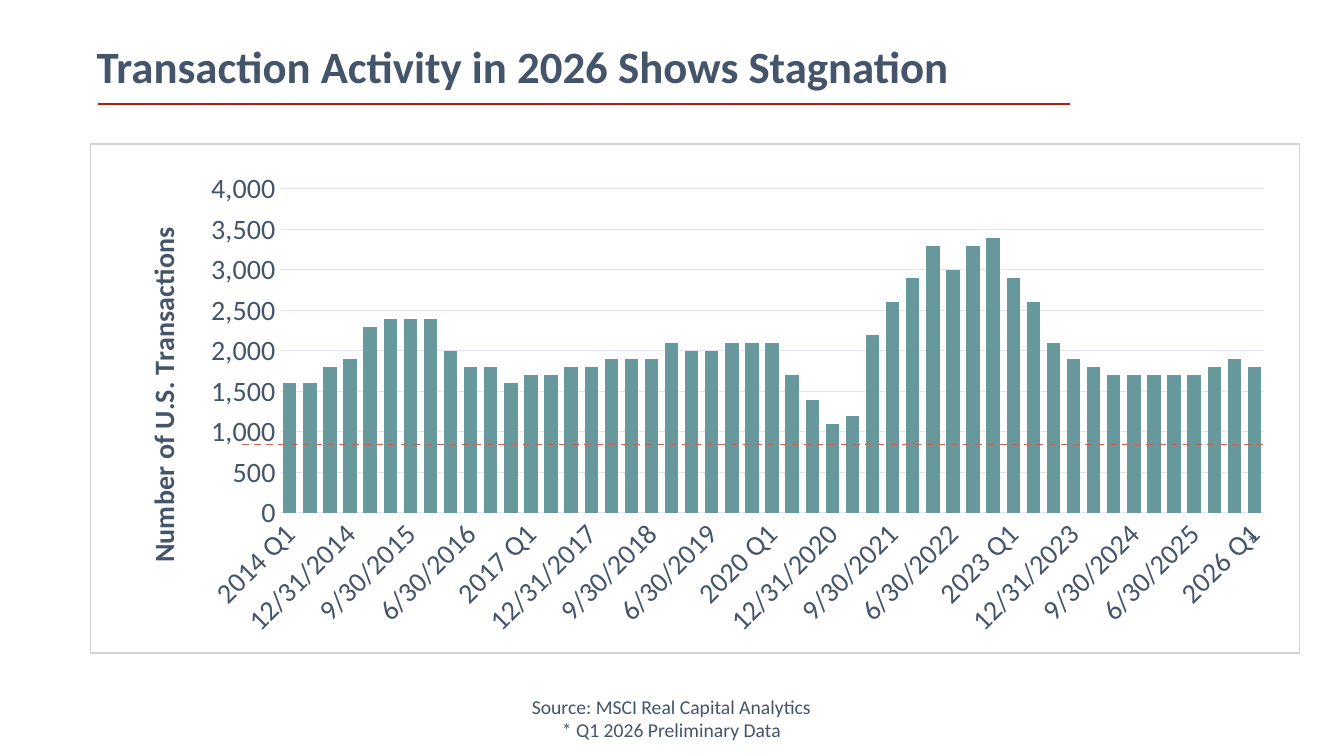
import lxml.etree
import pptx
import pptx.chart.data
import pptx.dml.color
import pptx.enum.chart
import pptx.enum.dml
import pptx.enum.shapes
import pptx.enum.text
import pptx.oxml.ns
import pptx.util

Inches = pptx.util.Inches
Pt = pptx.util.Pt
RGBColor = pptx.dml.color.RGBColor
qn = pptx.oxml.ns.qn

SLATE = RGBColor(0x44, 0x54, 0x6A)
TEAL = RGBColor(0x66, 0x98, 0x9C)
RED = RGBColor(0xB1, 0x1C, 0x11)
SOFT_RED = RGBColor(0xC4, 0x64, 0x57)
GRID = RGBColor(0xE0, 0xE5, 0xEB)
FRAME = RGBColor(0xD3, 0xD3, 0xD3)

QUARTERS = ["{} Q1", "6/30/{}", "9/30/{}", "12/31/{}"]
LABELS = [quarter.format(year) for year in range(2014, 2026) for quarter in QUARTERS]
LABELS.append("2026 Q1")
TRANSACTIONS = [
    1600, 1600, 1800, 1900, 2300, 2400, 2400, 2400, 2000, 1800, 1800, 1600,
    1700, 1700, 1800, 1800, 1900, 1900, 1900, 2100, 2000, 2000, 2100, 2100,
    2100, 1700, 1400, 1100, 1200, 2200, 2600, 2900, 3300, 3000, 3300, 3400,
    2900, 2600, 2100, 1900, 1800, 1700, 1700, 1700, 1700, 1700, 1800, 1900,
    1800,
]


class SlideBuilder:
    """Hold the shared style and the current slide, and draw each kind of element."""

    def __init__(self, slide, font_name, text_color):
        self.slide = slide
        self.font_name = font_name
        self.text_color = text_color

    def style_font(self, font, size, bold=False):
        font.name = self.font_name
        font.size = Pt(size)
        font.bold = bold
        font.color.rgb = self.text_color

    def style_line(self, line, color, width):
        line.color.rgb = color
        line.width = Pt(width)

    def text(self, left, top, width, height, lines, size, bold=False,
             align=pptx.enum.text.PP_ALIGN.LEFT,
             anchor=pptx.enum.text.MSO_ANCHOR.TOP, spacing=1.0, wrap=True):
        box = self.slide.shapes.add_textbox(
            Inches(left), Inches(top), Inches(width), Inches(height))
        frame = box.text_frame
        frame.word_wrap = wrap
        frame.vertical_anchor = anchor
        for index, line in enumerate(lines):
            para = frame.add_paragraph() if index else frame.paragraphs[0]
            para.alignment = align
            para.line_spacing = spacing
            span = para.add_run()
            span.text = line
            self.style_font(span.font, size, bold)

    def line(self, start, end, color, width, dash=None):
        connector = self.slide.shapes.add_connector(
            pptx.enum.shapes.MSO_CONNECTOR.STRAIGHT,
            Inches(start[0]), Inches(start[1]), Inches(end[0]), Inches(end[1]))
        self.style_line(connector.line, color, width)
        if dash:
            connector.line.dash_style = dash
        properties = connector._element.find(qn("p:spPr"))
        lxml.etree.SubElement(properties, qn("a:effectLst"))

    def outline(self, left, top, width, height, color, line_width):
        shape = self.slide.shapes.add_shape(
            pptx.enum.shapes.MSO_SHAPE.RECTANGLE,
            Inches(left), Inches(top), Inches(width), Inches(height))
        shape.shadow.inherit = False
        shape.fill.background()
        self.style_line(shape.line, color, line_width)

    def layout(self, **settings):
        layout = lxml.etree.Element(qn("c:layout"))
        manual = lxml.etree.SubElement(layout, qn("c:manualLayout"))
        for name, value in settings.items():
            lxml.etree.SubElement(manual, qn("c:" + name)).set("val", str(value))
        return layout

    def column_chart(self, left, top, width, height, labels, values, axis_title):
        data = pptx.chart.data.CategoryChartData(number_format="#,##0")
        data.categories = labels
        data.add_series("Series 1", values)
        chart = self.slide.shapes.add_chart(
            pptx.enum.chart.XL_CHART_TYPE.COLUMN_CLUSTERED,
            Inches(left), Inches(top), Inches(width), Inches(height), data).chart
        chart.has_legend = False
        chart.has_title = False
        self.style_font(chart.font, 20)

        plot = chart.plots[0]
        plot.vary_by_categories = False
        plot.gap_width = 50
        plot.overlap = -27
        fill = plot.series[0].format.fill
        fill.solid()
        fill.fore_color.rgb = TEAL

        for axis in (chart.category_axis, chart.value_axis):
            axis.major_tick_mark = pptx.enum.chart.XL_TICK_MARK.NONE
            axis.minor_tick_mark = pptx.enum.chart.XL_TICK_MARK.NONE
            self.style_font(axis.tick_labels.font, 20)
        self.style_category_axis(chart.category_axis)
        self.style_value_axis(chart.value_axis, axis_title)

        area = chart._chartSpace.find(".//" + qn("c:plotArea"))
        for old in area.findall(qn("c:layout")):
            area.remove(old)
        area.insert(0, self.layout(
            layoutTarget="inner", xMode="edge", yMode="edge",
            x=0.14, y=0.055, w=0.837, h=0.667))

    def style_category_axis(self, axis):
        self.style_line(axis.format.line, GRID, 0.75)
        element = axis._element
        element.find(qn("c:txPr")).find(qn("a:bodyPr")).set("rot", "-2700000")
        skip = lxml.etree.Element(qn("c:tickLblSkip"))
        skip.set("val", "3")
        element.find(qn("c:lblOffset")).addnext(skip)

    def style_value_axis(self, axis, title):
        axis.minimum_scale = 0
        axis.maximum_scale = 4000
        axis.major_unit = 500
        axis.tick_labels.number_format = "#,##0"
        axis.tick_labels.number_format_is_linked = False
        axis.format.line.fill.background()
        axis.has_major_gridlines = True
        self.style_line(axis.major_gridlines.format.line, GRID, 0.75)
        axis.has_title = True
        frame = axis.axis_title.text_frame
        span = frame.paragraphs[0].add_run()
        span.text = title
        self.style_font(span.font, 20, bold=True)
        frame._txBody.find(qn("a:bodyPr")).set("rot", "-5400000")
        element = axis.axis_title._element
        for old in element.findall(qn("c:layout")):
            element.remove(old)
        element.find(qn("c:tx")).addnext(
            self.layout(xMode="edge", yMode="edge", x=0.02, y=0.123))


def main():
    deck = pptx.Presentation()
    deck.slide_width = Inches(13.33)
    deck.slide_height = Inches(7.5)
    page = SlideBuilder(deck.slides.add_slide(deck.slide_layouts[6]), "Calibri", SLATE)

    page.line((0.97, 1.03), (10.61, 1.03), RED, 1)
    page.column_chart(1.14, 1.61, 11.67, 4.82, LABELS, TRANSACTIONS,
                      "Number of U.S. Transactions")
    page.text(0.86, 0.37, 12.54, 0.63,
              ["Transaction Activity in 2026 Shows Stagnation"], 32, bold=True,
              anchor=pptx.enum.text.MSO_ANCHOR.MIDDLE, spacing=0.9)
    page.text(4.77, 6.84, 3.78, 0.57,
              ["Source: MSCI Real Capital Analytics", "* Q1 2026 Preliminary Data"],
              14, align=pptx.enum.text.PP_ALIGN.CENTER)
    page.outline(0.9, 1.43, 11.99, 5.05, FRAME, 1)
    page.line((12.53, 4.41), (2.39, 4.41), SOFT_RED, 1.25,
              pptx.enum.dml.MSO_LINE.DASH)
    page.text(12.28, 5.18, 0.18, 0.4, ["*"], 18, wrap=False)
    deck.save("out.pptx")


if __name__ == "__main__":
    main()
